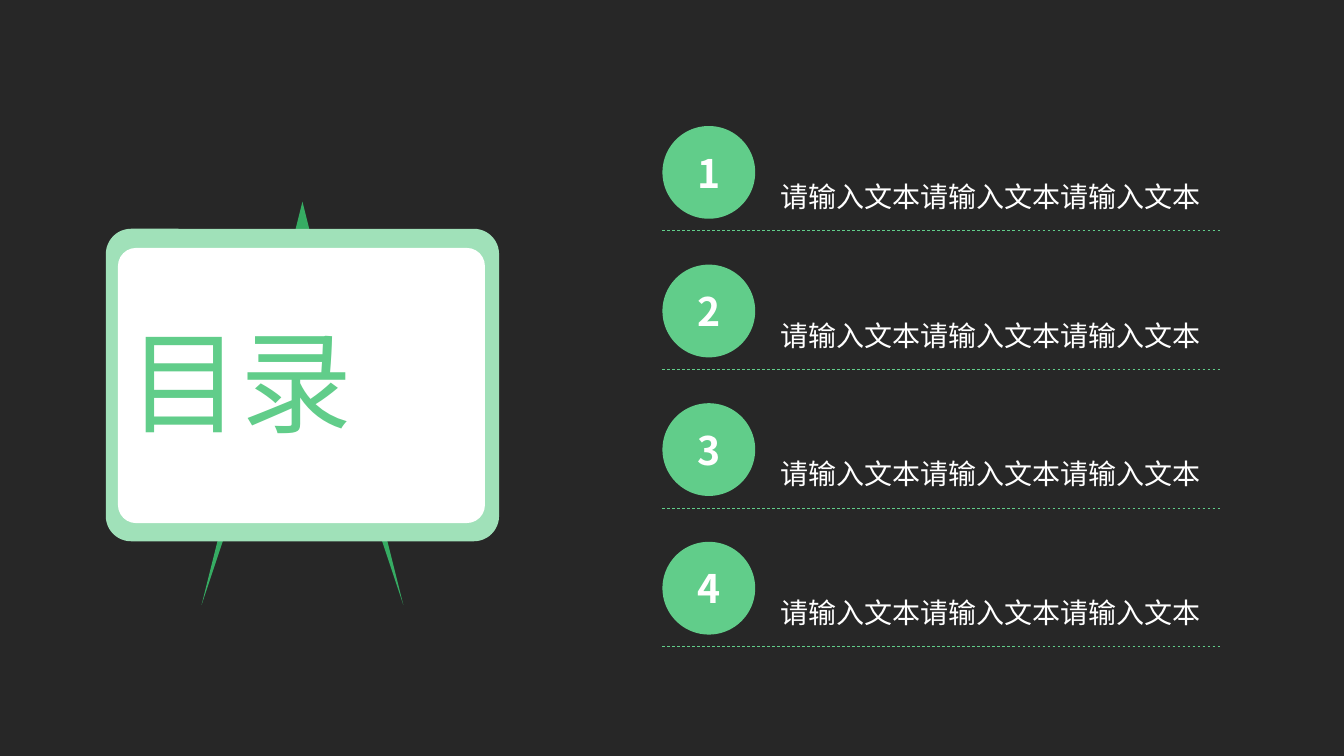
import pptx
import pptx.util
import pptx.dml.color
import pptx.enum.dml
import pptx.enum.shapes
import pptx.enum.text
import pptx.oxml.ns
from lxml import etree

# Content
TITLE = "目录"
ITEMS = ["请输入文本请输入文本请输入文本"] * 4

# Style
FONT = "Noto Sans CJK SC"
DARK, WHITE = "272727", "FFFFFF"
GREEN, DEEP, PALE = "61CD8A", "36AC63", "A0E1B9"

# Layout, in inches
LEFT, RIGHT, TOP, STEP, DISC = 6.57, 12.12, 1.25, 5.5 / 4, 0.92
STAND = [
    (2.79, 2.15), (2.83, 2.05), (2.86, 2.02), (3.01, 2.02), (3.11, 2.01),
    (3.22, 2.02), (3.26, 2.04), (3.31, 2.15),
    (4.29, 6.13), (4.3, 6.2), (4.28, 6.26), (4.2, 6.28), (4.13, 6.29),
    (3.9, 6.29), (3.83, 6.27), (3.79, 6.22),
    (3.05, 3.15),
    (2.3, 6.13), (2.28, 6.2), (2.24, 6.25), (2.17, 6.28), (2.09, 6.29),
    (1.86, 6.29), (1.81, 6.27), (1.8, 6.22),
]
BOARD = [  # left, top, width, height, corner radius, colour
    (1.05, 2.27, 3.9, 3.1, 0.25, PALE),
    (1.17, 2.46, 3.64, 2.73, 0.18, WHITE),
]

Inches = pptx.util.Inches
Kind = pptx.enum.shapes.MSO_SHAPE
Anchor = pptx.enum.text.MSO_ANCHOR
Align = pptx.enum.text.PP_ALIGN
qn = pptx.oxml.ns.qn


def paint(fill, color):
    fill.solid()
    fill.fore_color.rgb = pptx.dml.color.RGBColor.from_string(color)


def plain(shape, color):
    paint(shape.fill, color)
    shape.line.fill.background()
    shape.shadow.inherit = False
    return shape


def write(shape, text, size, color, align, bold=False):
    para = shape.text_frame.paragraphs[0]
    para.text = text
    para.alignment = align
    font = para.font
    font.size = pptx.util.Pt(size)
    font.bold = bold
    paint(font.fill, color)
    font.name = FONT
    # East Asian typeface
    base = para._p.pPr.find(qn("a:defRPr"))
    etree.SubElement(base, qn("a:ea")).set("typeface", FONT)
    return para


def label(box, text, size, color, anchor):
    shape = slide.shapes.add_textbox(*map(Inches, box))
    frame = shape.text_frame
    frame.word_wrap = True
    frame.auto_size = pptx.enum.text.MSO_AUTO_SIZE.SHAPE_TO_FIT_TEXT
    frame.vertical_anchor = anchor
    return write(shape, text, size, color, Align.JUSTIFY)


deck = pptx.Presentation()
deck.slide_width, deck.slide_height = Inches(13.33), Inches(7.5)
slide = deck.slides.add_slide(deck.slide_layouts[6])
paint(slide.background.fill, DARK)

# Easel
pen = slide.shapes.build_freeform(*STAND[0], scale=Inches(1))
pen.add_line_segments(STAND[1:], close=True)
plain(pen.convert_to_shape(), DEEP)
for *box, round_by, color in BOARD:
    panel = slide.shapes.add_shape(Kind.ROUNDED_RECTANGLE, *map(Inches, box))
    panel.adjustments[0] = round_by / box[3]
    plain(panel, color)

# Numbered rows
for i, item in enumerate(ITEMS):
    top = TOP + i * STEP
    para = label((7.64, top + 0.34, 4.43, 0.55), item, 20, WHITE, Anchor.MIDDLE)
    para.line_spacing = 1.5

    low = Inches(top + 1.04)
    rule = slide.shapes.add_connector(
        pptx.enum.shapes.MSO_CONNECTOR.STRAIGHT, Inches(LEFT), low, Inches(RIGHT), low)
    paint(rule.line.fill, GREEN)
    rule.line.width = pptx.util.Pt(0.5)
    rule.line.dash_style = pptx.enum.dml.MSO_LINE.DASH
    etree.SubElement(rule._element.spPr, qn("a:effectLst"))

    disc = slide.shapes.add_shape(
        Kind.OVAL, Inches(LEFT), Inches(top), Inches(DISC), Inches(DISC))
    plain(disc, GREEN)
    disc.text_frame.vertical_anchor = Anchor.MIDDLE
    write(disc, str(i + 1), 28, WHITE, Align.CENTER, bold=True)

# Title on the board
label((1.18, 3.05, 3.62, 1.45), TITLE, 80, GREEN, Anchor.TOP)

deck.save("out.pptx")
